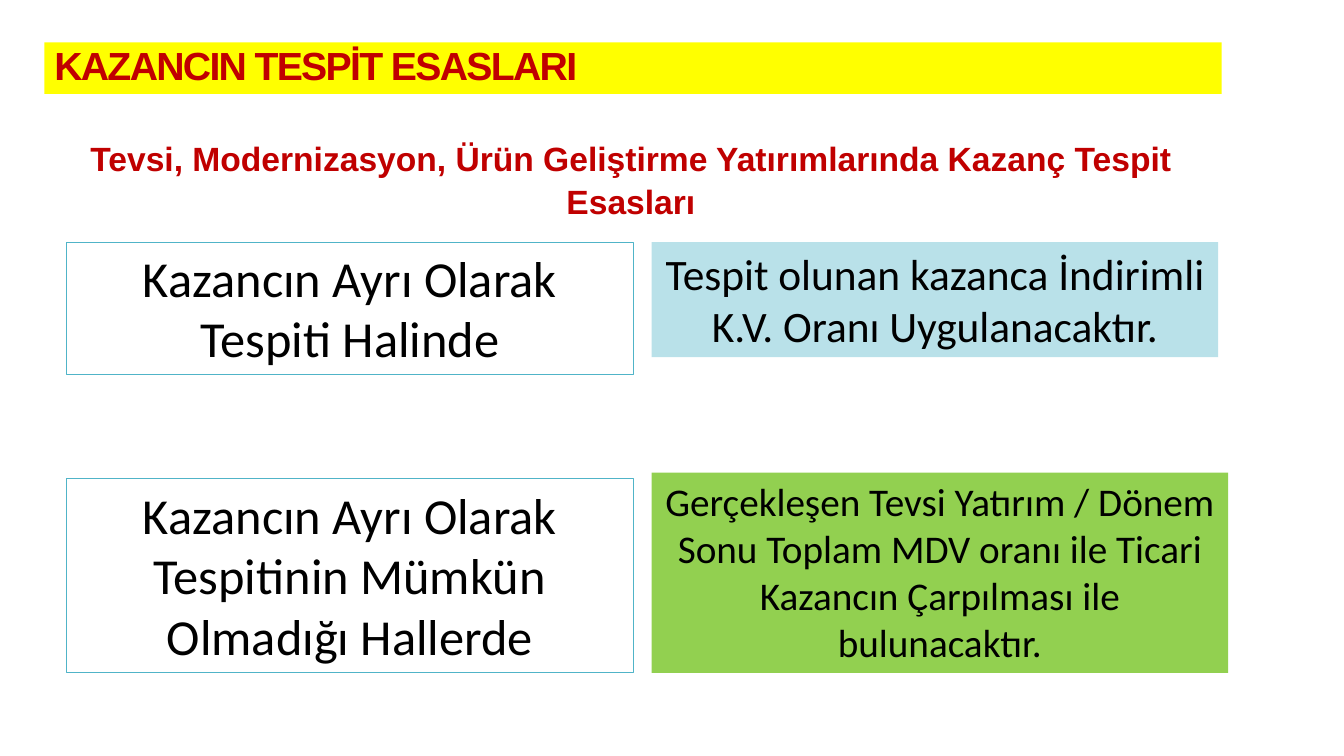
from pptx import Presentation
from pptx.dml.color import RGBColor
from pptx.enum.shapes import MSO_SHAPE as Shape
from pptx.enum.text import MSO_ANCHOR as Anchor, MSO_AUTO_SIZE as AutoSize, PP_ALIGN as Align
from pptx.util import Cm, Pt

COLORS = {
    "title_band": "FFFF00",
    "heading": "C00000",
    "body": "000000",
    "outline": "50B4C8",
    "separate": "B9E1E9",
    "ratio": "92D050",
}


def rgb(name):
    return RGBColor.from_string(COLORS[name])


def write(shape, text, size, font="Calibri", color="body", bold=False,
          align=Align.CENTER, anchor=Anchor.TOP, line_spacing=None,
          tracking=None, grow=True):
    frame = shape.text_frame
    frame.word_wrap = True
    frame.auto_size = AutoSize.SHAPE_TO_FIT_TEXT if grow else AutoSize.NONE
    frame.vertical_anchor = anchor
    paragraph = frame.paragraphs[0]
    paragraph.alignment = align
    paragraph.line_spacing = line_spacing
    run = paragraph.add_run()
    run.text = text
    run.font.name = font
    run.font.size = Pt(size)
    run.font.bold = bold
    run.font.color.rgb = rgb(color)
    if tracking is not None:
        # Letter spacing, in hundredths of a point
        run._r.get_or_add_rPr().set("spc", str(round(tracking * 100)))


def add_box(slide, box, fill=None, outline=None):
    shape = slide.shapes.add_shape(Shape.RECTANGLE, *map(Cm, box))
    shape.shadow.inherit = False
    if fill:
        shape.fill.solid()
        shape.fill.fore_color.rgb = rgb(fill)
    else:
        shape.fill.background()
    if outline:
        shape.line.color.rgb = rgb(outline)
        shape.line.width = Pt(0.75)
    else:
        shape.line.fill.background()
    return shape


def add_title(slide, box):
    write(add_box(slide, box, fill="title_band"), "KAZANCIN TESPİT ESASLARI", 28,
          font="Arial", color="heading", bold=True, align=Align.LEFT,
          anchor=Anchor.MIDDLE, line_spacing=0.85, tracking=-1.2, grow=False)


def add_subtitle(slide, box):
    write(slide.shapes.add_textbox(*map(Cm, box)),
          "Tevsi, Modernizasyon, Ürün Geliştirme Yatırımlarında Kazanç Tespit Esasları",
          24, font="Arial", color="heading", bold=True, line_spacing=1.06)


def add_case(slide, box, case, result, result_size, result_fill,
             case_height, result_height, result_width, case_drop=0):
    """Outlined case on the left, its filled result on the right."""
    left, top, width = box
    case_width, gap = 14.28, 0.46
    write(add_box(slide, (left, top + case_drop, case_width, case_height),
                  outline="outline"), case, 36)
    write(add_box(slide, (left + case_width + gap, top, result_width, result_height),
                  fill=result_fill), result, result_size)


def main():
    presentation = Presentation()
    presentation.slide_width, presentation.slide_height = Cm(33.87), Cm(19.05)
    slide = presentation.slides.add_slide(presentation.slide_layouts[6])

    # Headings
    add_title(slide, (1.12, 1.07, 29.67, 1.3))
    add_subtitle(slide, (1, 3.3, 29.8, 2.31))

    # Earnings determined separately
    add_case(slide, (1.68, 6.1, 29.02),
             "Kazancın Ayrı Olarak Tespiti Halinde",
             "Tespit olunan kazanca İndirimli K.V. Oranı Uygulanacaktır.",
             31, "separate", case_height=3.33, result_height=2.9, result_width=14.28)

    # Earnings that cannot be determined separately
    add_case(slide, (1.68, 11.91, 29.27),
             "Kazancın Ayrı Olarak Tespitinin Mümkün Olmadığı Hallerde",
             "Gerçekleşen Tevsi Yatırım / Dönem Sonu Toplam MDV oranı ile Ticari "
             "Kazancın Çarpılması ile bulunacaktır.",
             28, "ratio", case_height=4.88, result_height=5.05, result_width=14.53,
             case_drop=0.16)

    presentation.save("out.pptx")


if __name__ == "__main__":
    main()
